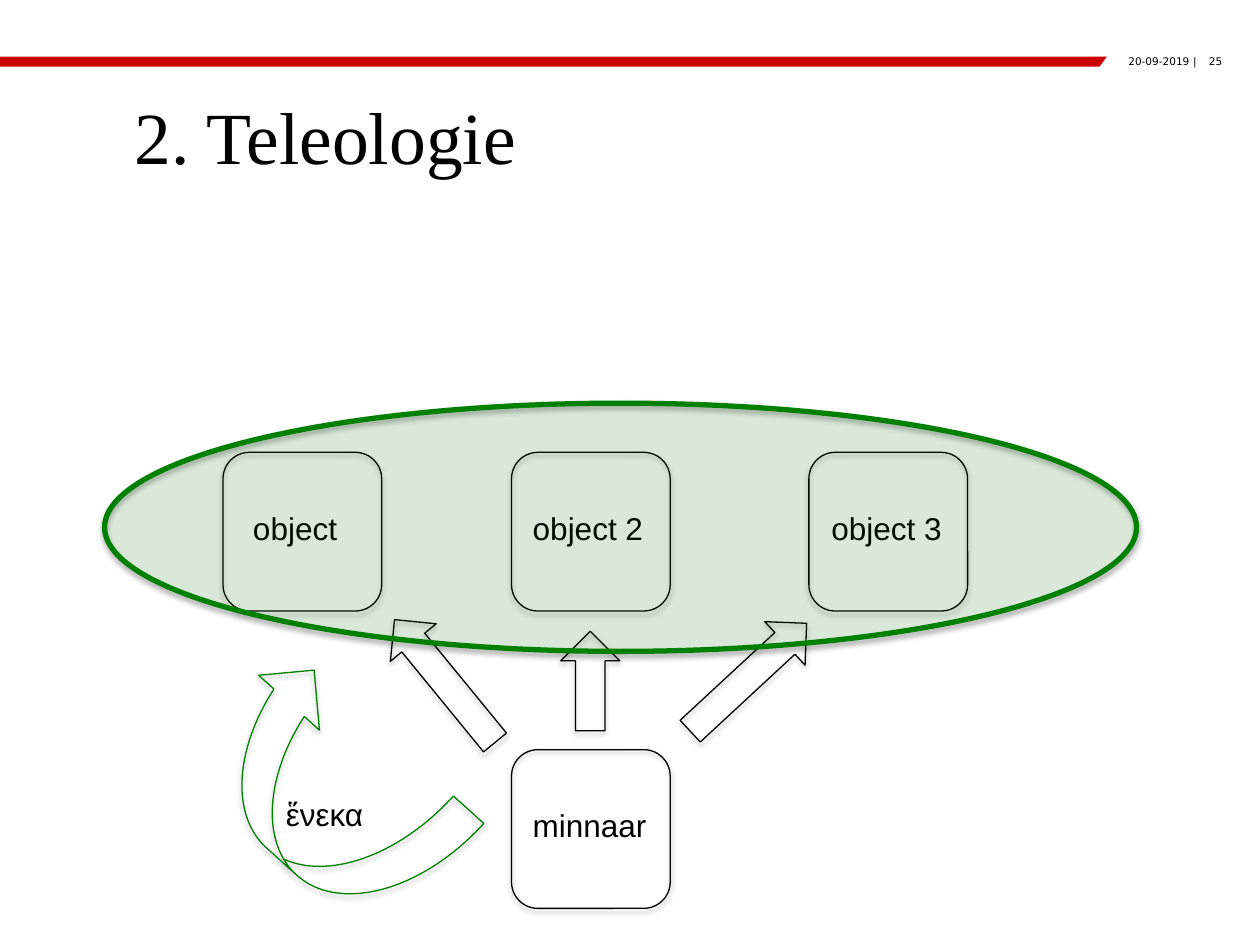
import lxml.etree
import pptx
import pptx.dml.color
import pptx.enum.shapes
import pptx.enum.text
import pptx.oxml.ns
import pptx.util

Inches = pptx.util.Inches
Pt = pptx.util.Pt
SHAPE = pptx.enum.shapes.MSO_SHAPE
ALIGN = pptx.enum.text.PP_ALIGN
ANCHOR = pptx.enum.text.MSO_ANCHOR

BLACK, WHITE, RED, GREEN = "000000", "FFFFFF", "CC0000", "008000"
BOX_SIZE = 1.26
OBJECT_TOP = 3.59


def color(hex_string):
    return pptx.dml.color.RGBColor.from_string(hex_string)


def qualified(tag):
    return pptx.oxml.ns.qn(tag)


def set_fill(shape, fill, alpha=None):
    if fill is None:
        shape.fill.background()
        return
    shape.fill.solid()
    shape.fill.fore_color.rgb = color(fill)
    if alpha is not None:
        rgb = shape._element.spPr.find(".//" + qualified("a:srgbClr"))
        lxml.etree.SubElement(rgb, qualified("a:alpha"), val=str(alpha * 1000))


def add_soft_shadow(shape):
    effects = shape._element.spPr.find(qualified("a:effectLst"))
    shadow = lxml.etree.SubElement(
        effects, qualified("a:outerShdw"), blurRad=str(Pt(3.1)),
        dist=str(Pt(1.8)), dir="5400000", rotWithShape="0")
    rgb = lxml.etree.SubElement(shadow, qualified("a:srgbClr"), val=BLACK)
    lxml.etree.SubElement(rgb, qualified("a:alpha"), val="35000")


def add_outlined(slide, kind, left, top, width, height, line=BLACK,
                 weight=0.75, rotation=0, fill=None, alpha=None):
    shape = slide.shapes.add_shape(
        kind, Inches(left), Inches(top), Inches(width), Inches(height))
    shape.shadow.inherit = False
    set_fill(shape, fill, alpha)
    shape.line.color.rgb = color(line)
    shape.line.width = Pt(weight)
    shape.rotation = rotation
    add_soft_shadow(shape)


def add_run(paragraph, text, size, font):
    run = paragraph.add_run()
    run.text = text
    run.font.size = Pt(size)
    run.font.name = font
    run.font.color.rgb = color(BLACK)


def set_margins(frame, left, top, right, bottom):
    frame.margin_left, frame.margin_top = Inches(left), Inches(top)
    frame.margin_right, frame.margin_bottom = Inches(right), Inches(bottom)


def add_label(slide, text, left, top, width):
    box = slide.shapes.add_textbox(
        Inches(left), Inches(top), Inches(width), Inches(0.4))
    box.text_frame.word_wrap = True
    add_run(box.text_frame.paragraphs[0], text, 18, "Arial")


def add_header_text(slide, text, left, width, alignment):
    box = slide.shapes.add_textbox(
        Inches(left), Inches(0.44), Inches(width), Inches(0.15))
    set_margins(box.text_frame, 0, 0, 0, 0)
    box.text_frame.word_wrap = False
    paragraph = box.text_frame.paragraphs[0]
    paragraph.alignment = alignment
    add_run(paragraph, text, 6, "DejaVu Sans")


def add_header(slide):
    # Red bar with a slanted white end that holds date and page number
    bar = slide.shapes.add_shape(
        SHAPE.RECTANGLE, 0, Inches(0.45), Inches(10), Inches(0.08))
    builder = slide.shapes.build_freeform(Inches(8.8), Inches(0.43))
    builder.add_line_segments(
        [(Inches(x), Inches(y)) for x, y in
         [(10, 0.43), (10, 0.54), (8.72, 0.54)]], close=True)
    bar_end = builder.convert_to_shape()
    for shape, fill in [(bar, RED), (bar_end, WHITE)]:
        shape.shadow.inherit = False
        set_fill(shape, fill)
        shape.line.fill.background()
    add_header_text(slide, "25", 9.49, 0.21, ALIGN.RIGHT)
    add_header_text(slide, "|", 9.47, 0.06, ALIGN.LEFT)
    add_header_text(slide, "20-09-2019", 8.61, 0.83, ALIGN.RIGHT)


def format_title(slide, text):
    title = slide.shapes.title
    title.left, title.top = Inches(0), Inches(0.64)
    title.width, title.height = Inches(10), Inches(0.87)
    frame = title.text_frame
    frame.auto_size = pptx.enum.text.MSO_AUTO_SIZE.NONE
    frame.vertical_anchor = ANCHOR.MIDDLE
    set_margins(frame, 1.07, 0.05, 0.3, 0.05)
    frame.paragraphs[0].alignment = ALIGN.LEFT
    add_run(frame.paragraphs[0], text, 42, "Times New Roman")


def add_box(slide, text, left, top, label_offset, label_width):
    add_outlined(slide, SHAPE.ROUNDED_RECTANGLE, left, top, BOX_SIZE, BOX_SIZE)
    add_label(slide, text, left + label_offset, top + 0.4, label_width)


def main():
    presentation = pptx.Presentation()
    presentation.slide_width = Inches(10)
    presentation.slide_height = Inches(7.5)
    slide = presentation.slides.add_slide(presentation.slide_layouts[5])
    add_header(slide)
    format_title(slide, "2. Teleologie")

    # The lover and the three objects
    add_box(slide, "minnaar", 4.06, 5.95, 0.07, BOX_SIZE)
    for text, left, offset in [("object", 1.77, 0.14),
                               ("object 2", 4.06, 0.07),
                               ("object 3", 6.42, 0.08)]:
        add_box(slide, text, left, OBJECT_TOP, offset, 1.1)

    # Curved arrow for the purpose
    add_outlined(slide, SHAPE.CURVED_DOWN_ARROW, 1.54, 5.65, 2.14, 1.3,
                 line=GREEN, rotation=222.1)
    add_label(slide, "ἕνεκα", 2.17, 6.26, 1.02)

    # Arrows from the lover to each object
    for left, top, width, rotation in [(2.9, 5.17, 1.26, 230.7),
                                       (5.31, 5.14, 1.26, 317.2),
                                       (4.29, 5.17, 0.79, 270)]:
        add_outlined(slide, SHAPE.RIGHT_ARROW, left, top, width, 0.47,
                     rotation=rotation)

    # Translucent ellipse around the objects
    add_outlined(slide, SHAPE.OVAL, 0.83, 3.2, 8.19, 1.97, line=GREEN,
                 weight=3, fill=GREEN, alpha=11)
    presentation.save("out.pptx")


if __name__ == "__main__":
    main()
